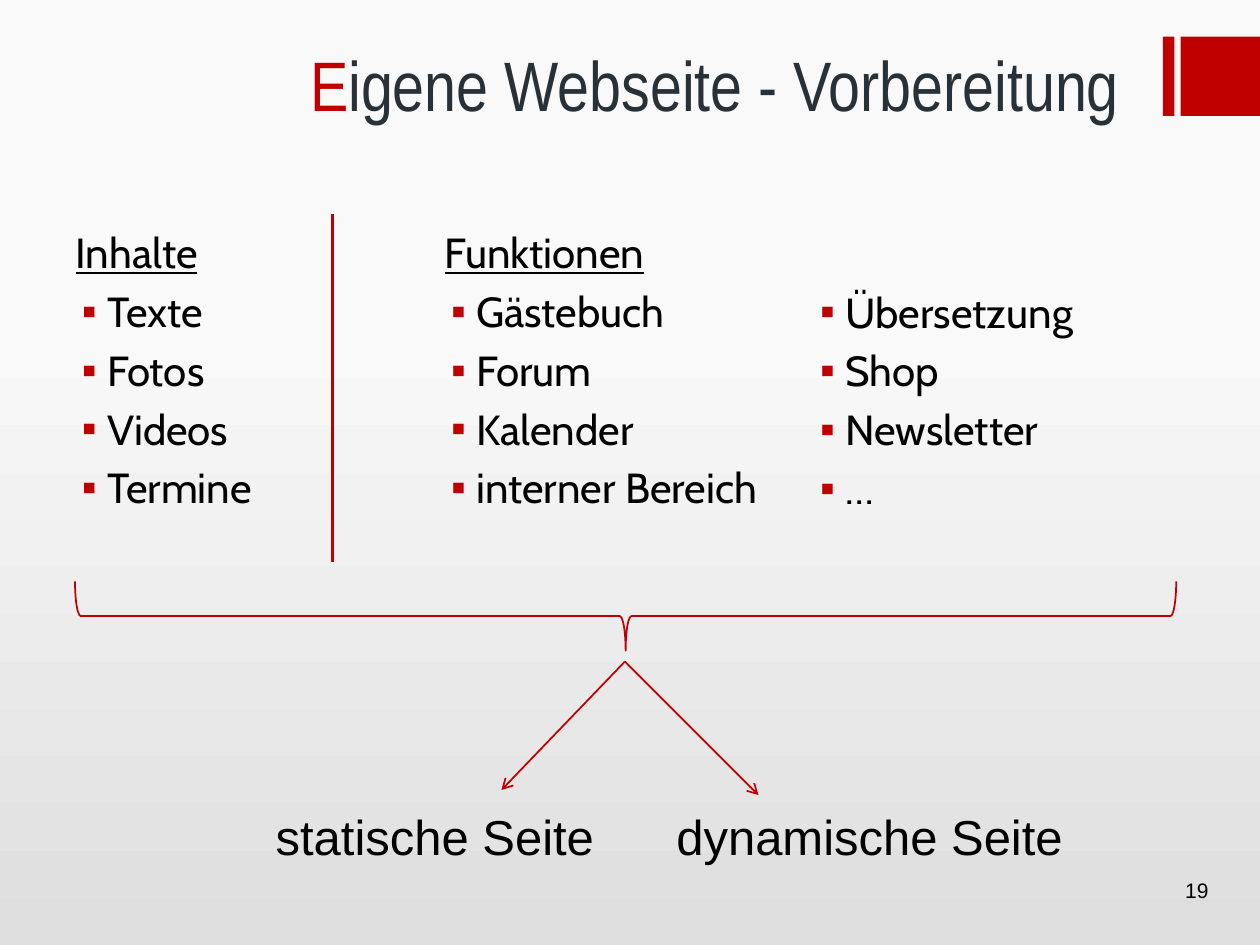
from copy import deepcopy
from lxml import etree
from pptx import Presentation
from pptx.dml.color import RGBColor
from pptx.enum import shapes, text
from pptx.oxml.ns import qn
from pptx.util import Inches, Pt

RED, BLACK = "C00000", "000000"
rgb = RGBColor.from_string


def add_run(para, words, size, font, color):
    run = para.add_run()
    run.text = words
    run.font.size = Pt(size)
    run.font.name = font
    run.font.bold = False
    run.font.color.rgb = rgb(color)
    return run


def add_tag(parent, tag, **attrs):
    return etree.SubElement(parent, qn(tag), attrs)


deck = Presentation()
deck.slide_width, deck.slide_height = Inches(10), Inches(7.5)
slide = deck.slides.add_slide(deck.slide_layouts[3 + 1])  # Comparison
items = slide.shapes

# Background: three stops, rising from the bottom
fill = slide.background.fill
fill.gradient()
fill.gradient_angle = 90
last = slide.element.findall(".//" + qn("a:gs"))[-1]
last.addnext(deepcopy(last))
shades = [(0, "DEDEDE"), (0.65, "F9F9F9"), (1, "F7F7F7")]
for stop, (pos, shade) in zip(fill.gradient_stops, shades):
    stop.position = pos
    stop.color.rgb = rgb(shade)

# Red blocks in the corner
for left, width in [(9.23, 0.09), (9.37, 0.63)]:
    block = items.add_shape(shapes.MSO_SHAPE.RECTANGLE, Inches(left),
                            Inches(0.29), Inches(width), Inches(0.63))
    block.shadow.inherit = False
    block.fill.solid()
    block.fill.fore_color.rgb = rgb(RED)
    block.line.fill.background()

# Title
title = items.title
title.left, title.top = Inches(0.98), Inches(0.28)
title.width, title.height = Inches(8), Inches(1.26)
frame = title.text_frame
frame.auto_size = text.MSO_AUTO_SIZE.NONE
frame.vertical_anchor = text.MSO_ANCHOR.TOP
para = frame.paragraphs[0]
para.alignment = text.PP_ALIGN.RIGHT
add_run(para, "E", 40, "Arial Narrow", RED)
add_run(para, "igene Webseite - Vorbereitung", 40, "Arial Narrow", "283138")

# Three lists; the last has no heading and starts one row lower
lists = [
    ("Inhalte", ["Texte", "Fotos", "Videos", "Termine"]),
    ("Funktionen", ["Gästebuch", "Forum", "Kalender", "interner Bereich"]),
    (None, ["Übersetzung", "Shop", "Newsletter", "…"]),
]
pitch, row = 2.93, 0.47
for col, (head, points) in enumerate(lists):
    body = slide.placeholders[col + 1]
    drop = 0 if head else row
    body.left, body.top = Inches(0.6 + col * pitch), Inches(1.75 + drop)
    body.width, body.height = Inches(pitch), Inches(3.02 - drop)
    frame = body.text_frame
    frame.auto_size = text.MSO_AUTO_SIZE.NONE
    frame.vertical_anchor = text.MSO_ANCHOR.TOP
    frame.word_wrap = True
    frame.margin_left = frame.margin_right = 0
    lines = [head] + points if head else points
    for num, line in enumerate(lines):
        para = frame.add_paragraph() if num else frame.paragraphs[0]
        para.space_before = Pt(4.8 if num else 0)
        run = add_run(para, line, 24, "Cabin", BLACK)
        props = para._p.get_or_add_pPr()
        if line == head:
            run.font.underline = True
            props.set("marL", "0")
            props.set("indent", "0")
            add_tag(props, "a:buNone")
        else:
            props.set("marL", str(Inches(0.25)))
            props.set("indent", str(Inches(-0.2)))
            add_tag(add_tag(props, "a:buClr"), "a:srgbClr", val=RED)
            add_tag(props, "a:buFont", typeface="Arial")
            add_tag(props, "a:buChar", char="▪")
spare = slide.placeholders[4].element
spare.getparent().remove(spare)

# Brace under the lists
brace = items.add_shape(shapes.MSO_SHAPE.RIGHT_BRACE, Inches(4.69),
                        Inches(0.52), Inches(0.55), Inches(8.74))
brace.rotation = 90
brace.shadow.inherit = False
brace.fill.background()
brace.line.color.rgb = rgb(RED)
brace.line.width = Pt(1)

# Divider and the two arrows
for x1, y1, x2, y2, width, arrow in [
    (2.64, 1.7, 2.64, 4.46, 1.5, False),
    (4.96, 5.25, 3.98, 6.27, 1, True),
    (4.96, 5.25, 6.02, 6.31, 1, True),
]:
    line = items.add_connector(shapes.MSO_CONNECTOR.STRAIGHT, Inches(x1),
                               Inches(y1), Inches(x2), Inches(y2))
    line.line.color.rgb = rgb(RED)
    line.line.width = Pt(width)
    if arrow:
        add_tag(line.line._get_or_add_ln(), "a:tailEnd", type="arrow")
    add_tag(line._element.spPr, "a:effectLst")

# Outcomes and page number
for words, left, top, width, height, size, side in [
    ("statische Seite", 2.09, 6.35, 2.84, 0.57, 28, "LEFT"),
    ("dynamische Seite", 5.27, 6.35, 4.53, 0.57, 28, "LEFT"),
    ("19", 8.66, 6.9, 1.03, 0.33, 12, "RIGHT"),
]:
    box = items.add_textbox(Inches(left), Inches(top),
                            Inches(width), Inches(height))
    frame = box.text_frame
    frame.word_wrap = True
    frame.vertical_anchor = text.MSO_ANCHOR.MIDDLE
    para = frame.paragraphs[0]
    para.alignment = text.PP_ALIGN[side]
    add_run(para, words, size, "Arial", BLACK)

deck.save("out.pptx")
